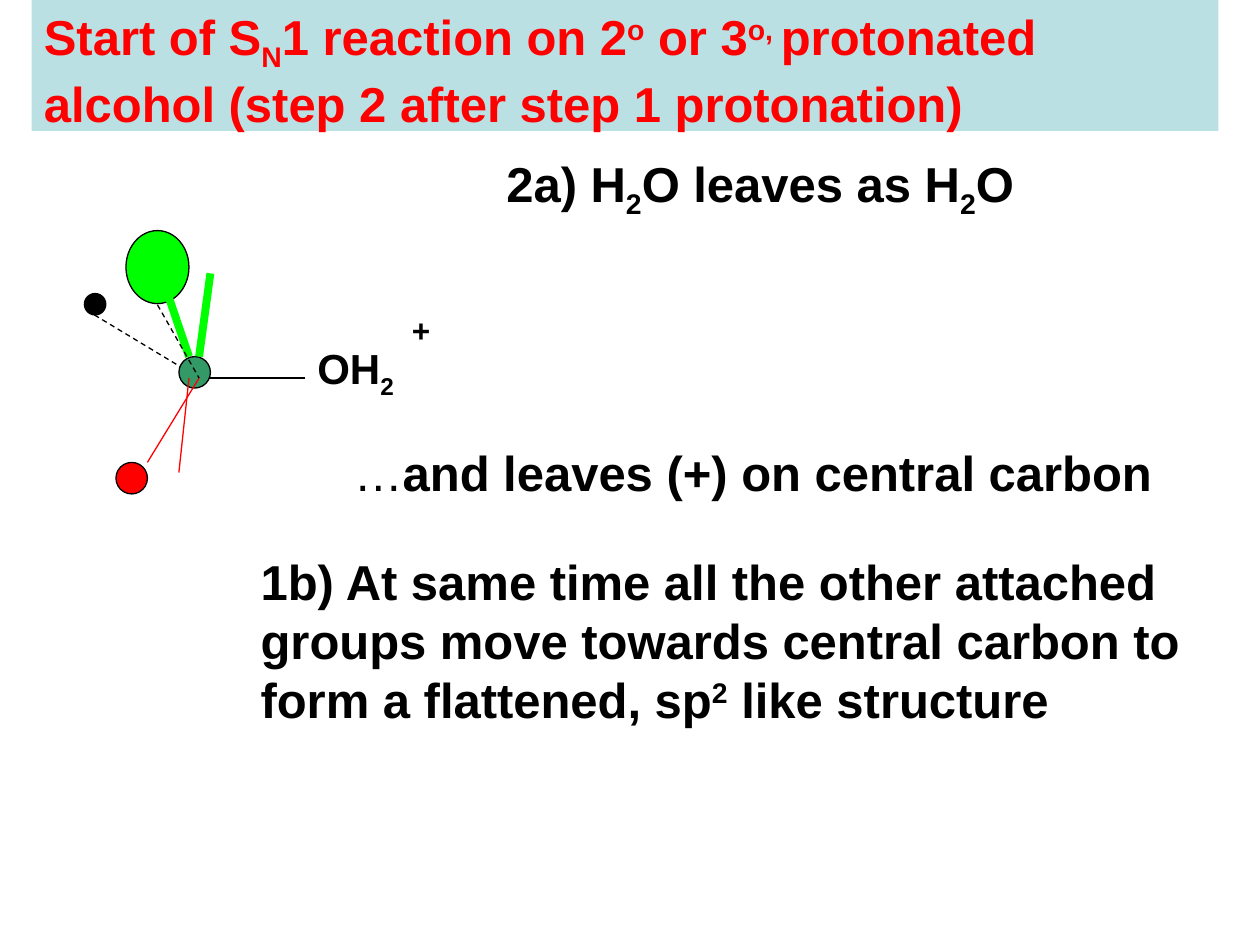
"""Build a slide on the start of the SN1 reaction of a protonated alcohol."""
import pptx
import pptx.dml.color
import pptx.enum.dml
import pptx.enum.shapes
import pptx.oxml.ns
import pptx.util
from lxml import etree

Inches = pptx.util.Inches
Pt = pptx.util.Pt
theme = {
    "font": "Arial", "head": 28, "label": 24, "sign": 18, "thin": 0.75, "thick": 4.5,
    "black": "000000", "red": "FF0000", "green": "00FF00", "teal": "339966", "band": "BBE0E3",
}
color = {k: pptx.dml.color.RGBColor.from_string(v) for k, v in theme.items() if isinstance(v, str) and k != "font"}


def write(runs, at, size="head", ink="black", fill=None, plain=()):
    box = slide.shapes.add_textbox(*map(Inches, at))
    if fill:
        box.fill.solid()
        box.fill.fore_color.rgb = color[fill]
    box.text_frame.word_wrap = True
    para = box.text_frame.paragraphs[0]
    for text, base in runs:
        run = para.add_run()
        run.text = text
        run.font.name = theme["font"]
        run.font.size = Pt(theme[size])
        run.font.bold = text not in plain
        run.font.color.rgb = color[ink]
        if base:
            run._r.get_or_add_rPr().set("baseline", str(base * 1000))


def bond(start, end, ink="black", width="thin", dash=False):
    line = slide.shapes.add_connector(
        pptx.enum.shapes.MSO_CONNECTOR.STRAIGHT, *map(Inches, start + end))
    line.line.color.rgb = color[ink]
    line.line.width = Pt(theme[width])
    if dash:
        line.line.dash_style = pptx.enum.dml.MSO_LINE.DASH
    etree.SubElement(line._element.spPr, pptx.oxml.ns.qn("a:effectLst"))


deck = pptx.Presentation()
deck.slide_width = Inches(10)
deck.slide_height = Inches(7.5)
slide = deck.slides.add_slide(deck.slide_layouts[6])
sub, sup = -25, 30

write([("Start of S", 0), ("N", sub), ("1 reaction on 2", 0), ("o", sup), (" or 3", 0),
       ("o, ", sup), ("protonated alcohol (step 2 after step 1 protonation)", 0)],
      (0.25, 0, 9.42, 1.04), ink="red", fill="band")

core = (1.58, 3)
bond((0.75, 2.5), core, dash=True)
bond(core, (2.42, 3))
write([("OH", 0), ("2", sub)], (2.42, 2.67, 1.25, 0.9), size="label")

for ink, left, top, wide, high in [
    ("red", 0.92, 3.67, 0.25, 0.25),
    ("black", 0.67, 2.33, 0.17, 0.17),
    ("green", 1, 1.83, 0.5, 0.58),
    ("teal", 1.42, 2.83, 0.25, 0.25),
]:
    ball = slide.shapes.add_shape(
        pptx.enum.shapes.MSO_SHAPE.OVAL, *map(Inches, (left, top, wide, high)))
    ball.shadow.inherit = False
    ball.fill.solid()
    ball.fill.fore_color.rgb = color[ink]
    ball.line.color.rgb = color["black"]
    ball.line.width = Pt(theme["thin"])

bond((1.5, 2.83), (1.33, 2.33), ink="green", width="thick")
bond(core, (1.17, 3.67), ink="red")
bond((1.25, 2.42), core, dash=True)
bond((1.58, 2.83), (1.67, 2.17), ink="green", width="thick")
bond((1.5, 3), (1.42, 3.75), ink="red")

write([("2a) H", 0), ("2", sub), ("O leaves as H", 0), ("2", sub), ("O", 0)],
      (3.92, 1.17, 4.92, 0.57))
write([("+", 0)], (3.17, 2.42, 0.5, 0.4), size="sign")
write([("…", 0), ("and leaves (+) on central carbon", 0)],
      (2.71, 3.46, 6.67, 0.57), plain=("…",))
write([("1b) At same time all the other attached groups move towards central carbon "
        "to form a flattened, sp", 0), ("2", sup), (" like structure", 0)],
      (1.97, 4.33, 7.61, 1.51))

deck.save("out.pptx")
